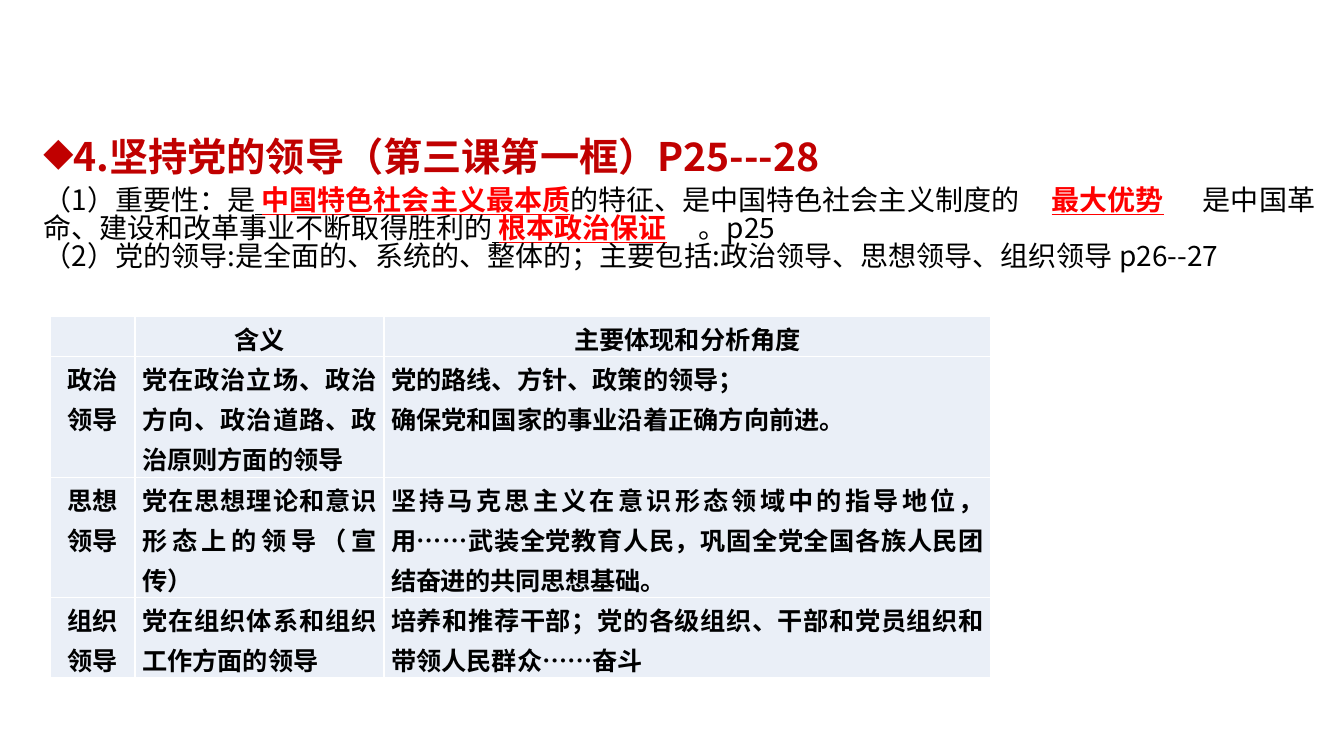
from dataclasses import dataclass

from lxml.etree import SubElement
from pptx import Presentation
from pptx.dml.color import RGBColor
from pptx.enum.text import MSO_ANCHOR, MSO_AUTO_SIZE, PP_ALIGN
from pptx.oxml.ns import qn
from pptx.util import Inches, Length, Pt

SLIDE_WIDTH, SLIDE_HEIGHT = Inches(13.33), Inches(7.5)


@dataclass(frozen=True)
class Theme:
    font: str = "Noto Sans CJK SC"
    heading: RGBColor = RGBColor(0xC0, 0x00, 0x00)
    answer: RGBColor = RGBColor(0xFF, 0x00, 0x00)
    ink: RGBColor = RGBColor(0x00, 0x00, 0x00)
    cell: RGBColor = RGBColor(0xEA, 0xEF, 0xF7)
    heading_size: float = 28
    body_size: float = 20
    table_size: float = 18
    text_spacing: float = 0.84
    table_spacing: float = 1.1


THEME = Theme()


@dataclass(frozen=True)
class Piece:
    text: str
    color: RGBColor = THEME.ink
    bold: bool = False
    underline: bool = False
    tracking: int = 0


@dataclass(frozen=True)
class Area:
    """A rectangle in percent of the slide's width and height."""
    left: float
    top: float
    width: float
    height: float


def across(percent: float) -> Length:
    return Length(round(SLIDE_WIDTH * percent / 100))


def down(percent: float) -> Length:
    return Length(round(SLIDE_HEIGHT * percent / 100))


def answer(text: str) -> Piece:
    return Piece(text, THEME.answer, bold=True, underline=True)


def blank(text: str) -> Piece:
    return Piece(text, underline=True)


def add_piece(paragraph, piece: Piece, size: float) -> None:
    run = paragraph.add_run()
    run.text = piece.text
    font = run.font
    font.name, font.size = THEME.font, Pt(size)
    font.bold, font.underline = piece.bold, piece.underline
    font.color.rgb = piece.color
    properties = run._r.get_or_add_rPr()
    properties.set("lang", "zh-CN")
    if piece.tracking:
        properties.set("spc", str(piece.tracking))
    SubElement(properties, qn("a:ea"), typeface=THEME.font)


def fill_paragraph(paragraph, pieces: list[Piece], size: float,
                   spacing: float, align: PP_ALIGN) -> None:
    paragraph.alignment = align
    paragraph.line_spacing = spacing
    for piece in pieces:
        add_piece(paragraph, piece, size)


def set_marker(paragraph, bullet: str = "", indent: float = 0,
               tabs: tuple[float, ...] = ()) -> None:
    """Set the bullet, hanging indent and tab stops, in inches."""
    properties = paragraph._p.get_or_add_pPr()
    properties.set("marL", str(Inches(indent)))
    properties.set("indent", str(-Inches(indent)))
    if bullet:
        SubElement(properties, qn("a:buChar"), char=bullet)
    else:
        SubElement(properties, qn("a:buNone"))
    if tabs:
        stops = SubElement(properties, qn("a:tabLst"))
        for stop in tabs:
            SubElement(stops, qn("a:tab"), pos=str(Inches(stop)), algn="l")


def place(placeholder, area: Area):
    """Move a placeholder and return its text frame, ready for text."""
    placeholder.left, placeholder.top = across(area.left), down(area.top)
    placeholder.width, placeholder.height = across(area.width), down(area.height)
    frame = placeholder.text_frame
    frame.word_wrap = True
    frame.auto_size = MSO_AUTO_SIZE.NONE
    frame.vertical_anchor = MSO_ANCHOR.TOP
    return frame


HEADING = Piece("4.坚持党的领导（第三课第一框）P25---28", THEME.heading, bold=True)
HEADING_AREA = Area(2.48, 17.87, 96.77, 7.6)
POINTS_AREA = Area(2.48, 24.15, 96.77, 15)
ANSWER_TABS = (6.87, 9.94, 11.88)
POINTS = [
    [
        Piece("（1）重要性：是"), blank(" "), answer("中国特色社会主义最本质"),
        Piece("的特征、是中国特色社会主义制度的"), blank("\t"), answer("最大优势\t"),
        Piece("是中国革命、建设和改革事业不断取得胜利的"), blank(" "),
        answer("根本政治保证\t"), Piece("。p25"),
    ],
    [Piece("（2）党的领导:是全面的、系统的、整体的；主要包括:"
           "政治领导、思想领导、组织领导 p26--27")],
]

TABLE_LEFT, TABLE_TOP = 3.75, 41.9
COLUMNS = (6.3, 18.53, 45.16)
ROWS = (5.2, 15.07, 10.4, 10.4)
LEADERSHIP = [
    ("", "含义", "主要体现和分析角度"),
    ("政治领导", "党在政治立场、政治方向、政治道路、政治原则方面的领导",
     "党的路线、方针、政策的领导；\n确保党和国家的事业沿着正确方向前进。"),
    ("思想领导", "党在思想理论和意识形态上的领导（宣传）",
     "坚持马克思主义在意识形态领域中的指导地位，用……武装全党教育人民，"
     "巩固全党全国各族人民团结奋进的共同思想基础。"),
    ("组织领导", "党在组织体系和组织工作方面的领导",
     "培养和推荐干部；党的各级组织、干部和党员组织和带领人民群众……奋斗"),
]
TIGHT_CELL = (2, 2)


def add_heading(slide) -> None:
    paragraph = place(slide.shapes.title, HEADING_AREA).paragraphs[0]
    set_marker(paragraph, "◆", 0.19)
    fill_paragraph(paragraph, [HEADING], THEME.heading_size,
                   THEME.text_spacing, PP_ALIGN.LEFT)


def add_points(slide) -> None:
    frame = place(slide.placeholders[1], POINTS_AREA)
    for index, pieces in enumerate(POINTS):
        paragraph = frame.add_paragraph() if index else frame.paragraphs[0]
        set_marker(paragraph, tabs=ANSWER_TABS)
        paragraph.space_before = Pt(0)
        fill_paragraph(paragraph, pieces, THEME.body_size,
                       THEME.text_spacing, PP_ALIGN.LEFT)


def fill_cell(cell, text: str, align: PP_ALIGN, tracking: int) -> None:
    cell.fill.solid()
    cell.fill.fore_color.rgb = THEME.cell
    cell.margin_left = cell.margin_right = Inches(0.07)
    cell.margin_top = cell.margin_bottom = 0
    if not text:
        return
    for index, line in enumerate(text.split("\n")):
        frame = cell.text_frame
        paragraph = frame.add_paragraph() if index else frame.paragraphs[0]
        fill_paragraph(paragraph, [Piece(line, bold=True, tracking=tracking)],
                       THEME.table_size, THEME.table_spacing, align)


def add_leadership_table(slide) -> None:
    table = slide.shapes.add_table(
        len(ROWS), len(COLUMNS), across(TABLE_LEFT), down(TABLE_TOP),
        across(sum(COLUMNS)), down(sum(ROWS))).table
    table.first_row = table.horz_banding = False
    for column, width in zip(table.columns, COLUMNS):
        column.width = across(width)
    for r, (row, height) in enumerate(zip(table.rows, ROWS)):
        row.height = down(height)
        for c, text in enumerate(LEADERSHIP[r]):
            label = r == 0 or c == 0
            fill_cell(table.cell(r, c), text,
                      PP_ALIGN.CENTER if label else PP_ALIGN.JUSTIFY,
                      -20 if (r, c) == TIGHT_CELL else 0)


def main() -> None:
    deck = Presentation()
    deck.slide_width, deck.slide_height = SLIDE_WIDTH, SLIDE_HEIGHT
    slide = deck.slides.add_slide(deck.slide_layouts[1])
    add_heading(slide)
    add_points(slide)
    add_leadership_table(slide)
    deck.save("out.pptx")


if __name__ == "__main__":
    main()
